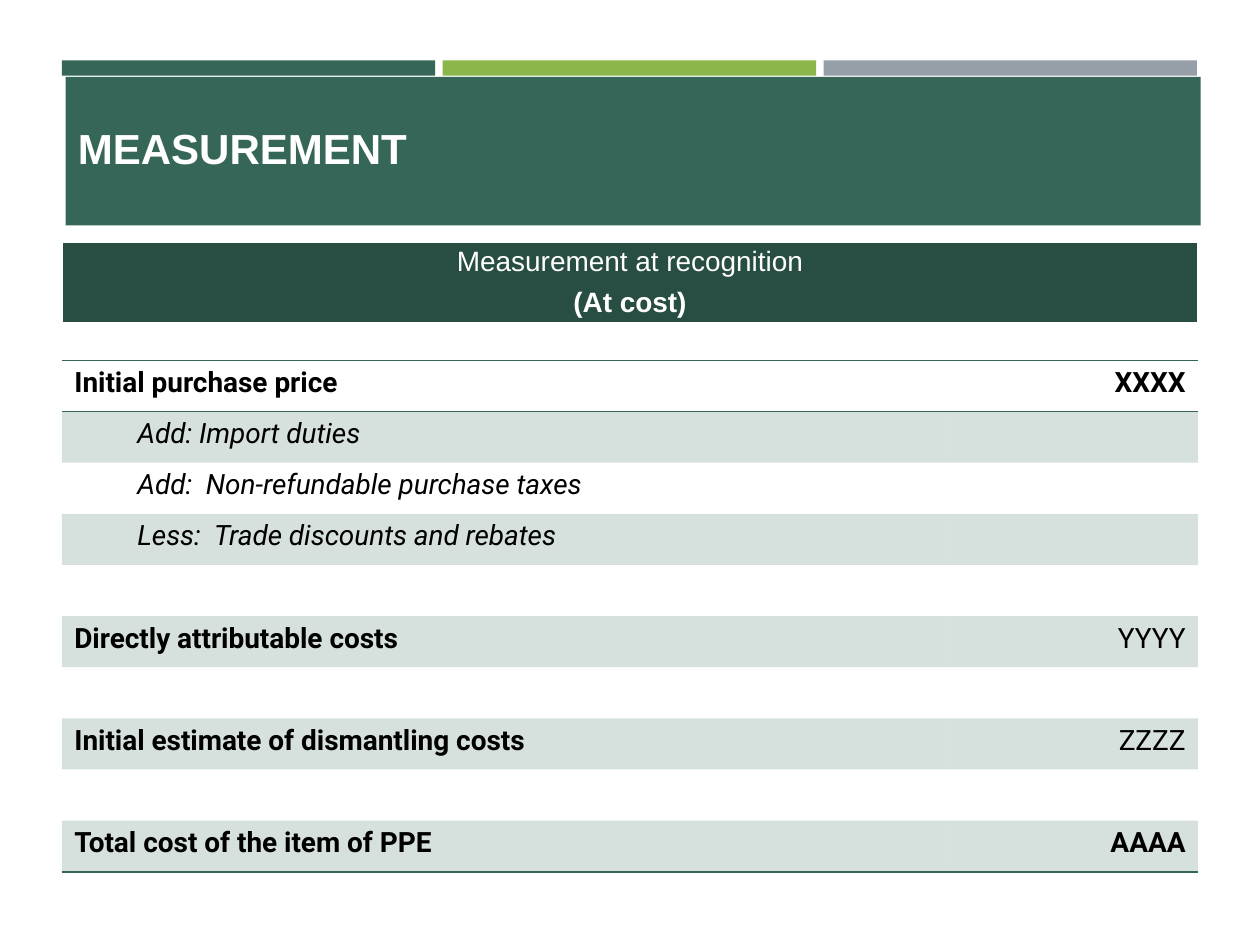
import lxml.etree
import pptx
import pptx.dml.color
import pptx.enum.shapes
import pptx.enum.text
import pptx.oxml.ns
import pptx.util

Inches = pptx.util.Inches
Pt = pptx.util.Pt
ALIGN = pptx.enum.text.PP_ALIGN
GREEN, LIME, GRAY, DARK = "366658", "8CB64A", "969FA7", "284D42"
WHITE, BLACK = "FFFFFF", "000000"
PLAIN_TABLE = "{2D5ABB26-0587-4C30-8999-92F81FD0307C}"
BOLD, ITALIC, REGULAR = {"bold": True}, {"italic": True}, {}
COST_ROWS = [
    ("Initial purchase price", BOLD, "XXXX", BOLD),
    ("Add: Import duties", ITALIC, "", REGULAR),
    ("Add:  Non-refundable purchase taxes", ITALIC, "", REGULAR),
    ("Less:  Trade discounts and rebates", ITALIC, "", REGULAR),
    ("", REGULAR, "", REGULAR),
    ("Directly attributable costs", BOLD, "YYYY", REGULAR),
    ("", REGULAR, "", REGULAR),
    ("Initial estimate of dismantling costs", BOLD, "ZZZZ", REGULAR),
    ("", REGULAR, "", REGULAR),
    ("Total cost of the item of PPE", BOLD, "AAAA", BOLD),
]


def color(value):
    """Turn a hex string into a colour."""
    return pptx.dml.color.RGBColor.from_string(value)


def apply(target, formats):
    """Set each attribute named in the formats."""
    for name, value in formats.items():
        setattr(target, name, value)


def add_span(para, text, ink, formats):
    """Add one formatted run to a paragraph."""
    span = para.add_run()
    span.text = text
    span.font.color.rgb = color(ink)
    apply(span.font, formats)


def add_block(page, box, fill):
    """Draw a flat rectangle without an outline."""
    block = page.shapes.add_shape(
        pptx.enum.shapes.MSO_SHAPE.RECTANGLE, *map(Inches, box))
    block.shadow.inherit = False
    block.fill.solid()
    block.fill.fore_color.rgb = color(fill)
    block.line.fill.background()
    return block


def add_stripes(page, box):
    """Divide the box into three coloured stripes with equal gaps."""
    left, top, width, height = box
    gap = 0.06
    stripe = (width - 2 * gap) / 3
    for index, fill in enumerate((GREEN, LIME, GRAY)):
        add_block(page, (left + index * (stripe + gap), top, stripe, height), fill)


def add_title(page, box, text):
    """Draw the banner and its title."""
    left, top, width, height = box
    add_block(page, box, GREEN)
    title = page.shapes.add_textbox(
        *map(Inches, (left, top - 0.06, width, height + 0.07)))
    frame = title.text_frame
    apply(frame, {"word_wrap": True,
                  "vertical_anchor": pptx.enum.text.MSO_ANCHOR.MIDDLE})
    para = frame.paragraphs[0]
    para.alignment = ALIGN.JUSTIFY
    add_span(para, text, WHITE, {"name": "Arial", "size": Pt(24), "bold": True})


def add_heading(page, box, lines):
    """Draw the dark heading with centred lines."""
    heading = add_block(page, box, DARK)
    heading.line.color.rgb = color(WHITE)
    heading.line.width = Pt(1.75)
    frame = heading.text_frame
    apply(frame, {"word_wrap": True,
                  "vertical_anchor": pptx.enum.text.MSO_ANCHOR.MIDDLE})
    apply(frame, {"margin_" + side: Inches(0.01)
                  for side in ("left", "top", "right", "bottom")})
    for index, (text, formats) in enumerate(lines):
        para = frame.add_paragraph() if index else frame.paragraphs[0]
        apply(para, {"alignment": ALIGN.CENTER, "line_spacing": 0.9,
                     "space_after": Pt(6.3)})
        add_span(para, text, WHITE, {"name": "Arial", "size": Pt(16), **formats})


def add_child(parent, tag, **attributes):
    """Append a drawing element to its parent."""
    return lxml.etree.SubElement(parent, pptx.oxml.ns.qn(tag), attributes)


def add_rule(cell, tag):
    """Draw a thin green border on one side of a cell."""
    border = add_child(cell._tc.get_or_add_tcPr(), tag, w=str(Pt(1)))
    add_child(add_child(border, "a:solidFill"), "a:srgbClr", val=GREEN)


def shade(cell, banded):
    """Give a cell a translucent green band or no fill."""
    if not banded:
        cell.fill.background()
        return
    cell.fill.solid()
    cell.fill.fore_color.rgb = color(GREEN)
    tint = cell._tc.tcPr.find(".//" + pptx.oxml.ns.qn("a:solidFill") + "/*")
    if cell._tc.tcPr[-1].tag == pptx.oxml.ns.qn("a:solidFill"):
        tint = cell._tc.tcPr[-1][0]
    add_child(tint, "a:alpha", val="20000")


def add_costs(page, box, rows):
    """Build the banded cost table."""
    left, top, width, height = box
    amount_width = 1.96
    table = page.shapes.add_table(len(rows), 2, *map(Inches, box)).table
    apply(table, {"first_row": False, "horz_banding": False})
    table._tbl.tblPr.find(pptx.oxml.ns.qn("a:tableStyleId")).text = PLAIN_TABLE
    table.columns[0].width = Inches(width - amount_width)
    table.columns[1].width = Inches(amount_width)
    for index, (label, label_style, amount, amount_style) in enumerate(rows):
        table.rows[index].height = Inches(height / len(rows))
        entries = ((label, label_style, ALIGN.LEFT),
                   (amount, amount_style, ALIGN.RIGHT))
        for column, (text, formats, alignment) in enumerate(entries):
            cell = table.cell(index, column)
            if index == 0:
                add_rule(cell, "a:lnT")
            if index in (0, len(rows) - 1):
                add_rule(cell, "a:lnB")
            shade(cell, index % 2 == 1)
            para = cell.text_frame.paragraphs[0]
            para.alignment = alignment
            if formats is ITALIC:
                para.level = 1
                para._p.get_or_add_pPr().set("marL", str(Inches(0.5)))
            if text:
                add_span(para, text, BLACK,
                         {"name": "Roboto", "size": Pt(16), **formats})


def main():
    """Assemble and save the deck."""
    deck = pptx.Presentation()
    apply(deck, {"slide_width": Inches(10), "slide_height": Inches(7.5)})
    page = deck.slides.add_slide(deck.slide_layouts[6])
    add_stripes(page, (0.49, 0.48, 9.01, 0.12))
    add_title(page, (0.52, 0.61, 9.01, 1.18), "MEASUREMENT")
    add_heading(page, (0.49, 1.92, 9.02, 0.65),
                [("Measurement at recognition", REGULAR), ("(At cost)", BOLD)])
    add_costs(page, (0.49, 2.86, 9.02, 4.06), COST_ROWS)
    deck.save("out.pptx")


if __name__ == "__main__":
    main()
